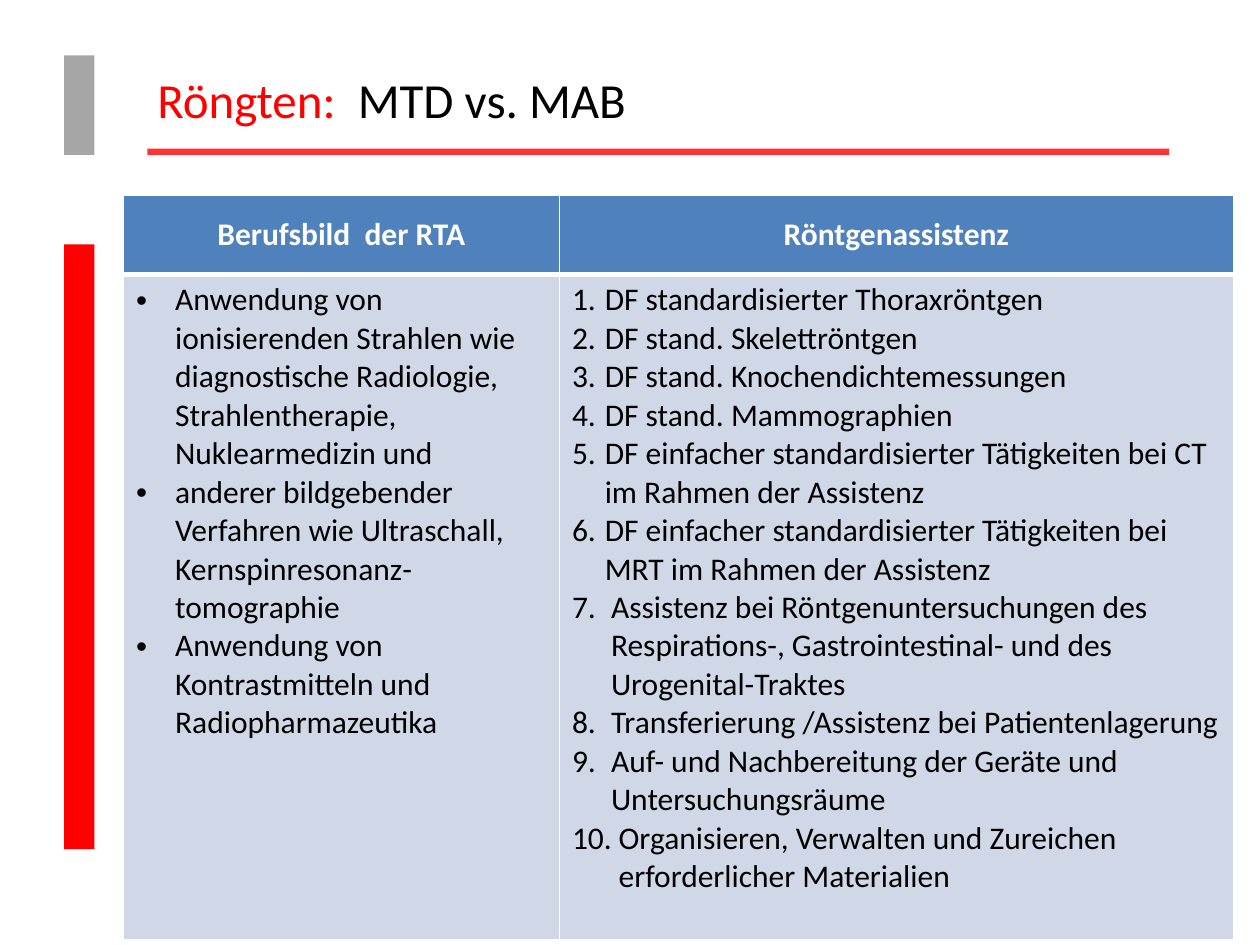
from lxml import etree
from pptx import Presentation
from pptx.dml.color import RGBColor
from pptx.enum.shapes import MSO_SHAPE
from pptx.enum.text import MSO_ANCHOR, PP_ALIGN
from pptx.oxml.ns import qn
from pptx.util import Inches, Pt

RECTANGLE = MSO_SHAPE.RECTANGLE
MIDDLE = MSO_ANCHOR.MIDDLE
CENTER = PP_ALIGN.CENTER

WHITE = RGBColor(0xFF, 0xFF, 0xFF)
BLACK = RGBColor(0, 0, 0)
RED = RGBColor(0xFF, 0, 0)
LIGHT_RED = RGBColor(0xFF, 0x33, 0x33)
GRAY = RGBColor(0xA6, 0xA6, 0xA6)
HEADER_BLUE = RGBColor(0x4F, 0x81, 0xBD)
BODY_BLUE = RGBColor(0xD0, 0xD8, 0xE8)

FONT = "Calibri"
HEADERS = ["Berufsbild  der RTA", "Röntgenassistenz"]
COLUMN_WIDTHS = [3.46, 5.35]
ROW_HEIGHTS = [0.63, 5.28]

# Each entry: text and hanging indent in inches; \v is a line break
PROFILE = [
    ("Anwendung von ionisierenden Strahlen wie diagnostische Radiologie, "
     "Strahlentherapie, Nuklearmedizin und", 0.31),
    ("anderer bildgebender Verfahren wie Ultraschall, "
     "Kernspinresonanz-tomographie", 0.31),
    ("Anwendung von Kontrastmitteln und Radiopharmazeutika", 0.31),
]
ASSISTANCE = [
    ("DF standardisierter Thoraxröntgen", 0.26),
    ("DF stand. Skelettröntgen", 0.26),
    ("DF stand. Knochendichtemessungen", 0.26),
    ("DF stand. Mammographien", 0.26),
    ("DF einfacher standardisierter Tätigkeiten bei CT\v"
     "im Rahmen der Assistenz", 0.26),
    ("DF einfacher standardisierter Tätigkeiten bei\v"
     "MRT im Rahmen der Assistenz", 0.26),
    ("Assistenz bei Röntgenuntersuchungen des\v"
     "Respirations-, Gastrointestinal- und des\vUrogenital-Traktes", 0.31),
    ("Transferierung /Assistenz bei Patientenlagerung", 0.31),
    ("Auf- und Nachbereitung der Geräte und\vUntersuchungsräume", 0.31),
    ("Organisieren, Verwalten und Zureichen\verforderlicher Materialien", 0.37),
]


def set_font(font, size, color, bold=False):
    font.name = FONT
    font.size = Pt(size)
    font.bold = bold
    font.color.rgb = color


def add_bar(page, left, top, width, height, color):
    bar = page.shapes.add_shape(
        RECTANGLE, Inches(left), Inches(top), Inches(width), Inches(height))
    bar.shadow.inherit = False
    bar.fill.solid()
    bar.fill.fore_color.rgb = color
    bar.line.fill.background()


def add_frame(page):
    """Side bars and the rule below the title."""
    add_bar(page, 0.51, 0.44, 0.24, 0.79, GRAY)
    add_bar(page, 0.51, 1.94, 0.24, 4.8, RED)
    add_bar(page, 1.17, 1.18, 8.11, 0.05, LIGHT_RED)


def add_title(page, left, top, width, height):
    box = page.shapes.add_textbox(
        Inches(left), Inches(top), Inches(width), Inches(height))
    frame = box.text_frame
    frame.word_wrap = True
    frame.vertical_anchor = MIDDLE
    para = frame.paragraphs[0]
    for text, color in [("Röngten:  ", RED), ("MTD vs. MAB", BLACK)]:
        span = para.add_run()
        span.text = text
        set_font(span.font, 28, color)


def style_cell(cell, color, bottom_width):
    """White borders on all sides, then the fill."""
    properties = cell._tc.get_or_add_tcPr()
    for side, width in [("L", 1), ("R", 1), ("T", 1), ("B", bottom_width)]:
        line = etree.SubElement(properties, qn(f"a:ln{side}"), w=str(Pt(width)))
        fill = etree.SubElement(line, qn("a:solidFill"))
        etree.SubElement(fill, qn("a:srgbClr"), val=str(WHITE))
    cell.fill.solid()
    cell.fill.fore_color.rgb = color


def fill_list(cell, items, numbered):
    cell.margin_right = Inches(0.05)
    frame = cell.text_frame
    for index, (text, indent) in enumerate(items):
        para = frame.add_paragraph() if index else frame.paragraphs[0]
        para.text = text
        properties = para._p.get_or_add_pPr()
        properties.set("marL", str(Inches(indent)))
        properties.set("indent", str(-Inches(indent)))
        if numbered:
            etree.SubElement(properties, qn("a:buAutoNum"), type="arabicPeriod")
        else:
            etree.SubElement(properties, qn("a:buFont"), typeface="Arial")
            etree.SubElement(properties, qn("a:buChar"), char="•")
        set_font(para.font, 18, BLACK)


def add_comparison(page, left, top):
    table = page.shapes.add_table(
        2, 2, Inches(left), Inches(top),
        Inches(sum(COLUMN_WIDTHS)), Inches(sum(ROW_HEIGHTS))).table
    for column, width in zip(table.columns, COLUMN_WIDTHS):
        column.width = Inches(width)
    for row, height in zip(table.rows, ROW_HEIGHTS):
        row.height = Inches(height)

    # Header row
    for index, text in enumerate(HEADERS):
        cell = table.cell(0, index)
        style_cell(cell, HEADER_BLUE, 3)
        cell.vertical_anchor = MIDDLE
        para = cell.text_frame.paragraphs[0]
        para.text = text
        para.alignment = CENTER
        set_font(para.font, 18, WHITE, bold=True)

    # Body row
    for index, items in enumerate([PROFILE, ASSISTANCE]):
        cell = table.cell(1, index)
        style_cell(cell, BODY_BLUE, 1)
        fill_list(cell, items, numbered=index == 1)


def main():
    deck = Presentation()
    deck.slide_width = Inches(10)
    deck.slide_height = Inches(7.5)
    page = deck.slides.add_slide(deck.slide_layouts[6])
    add_frame(page)
    add_title(page, 1.15, 0.48, 6.85, 0.61)
    add_comparison(page, 0.98, 1.55)
    deck.save("out.pptx")


if __name__ == "__main__":
    main()
